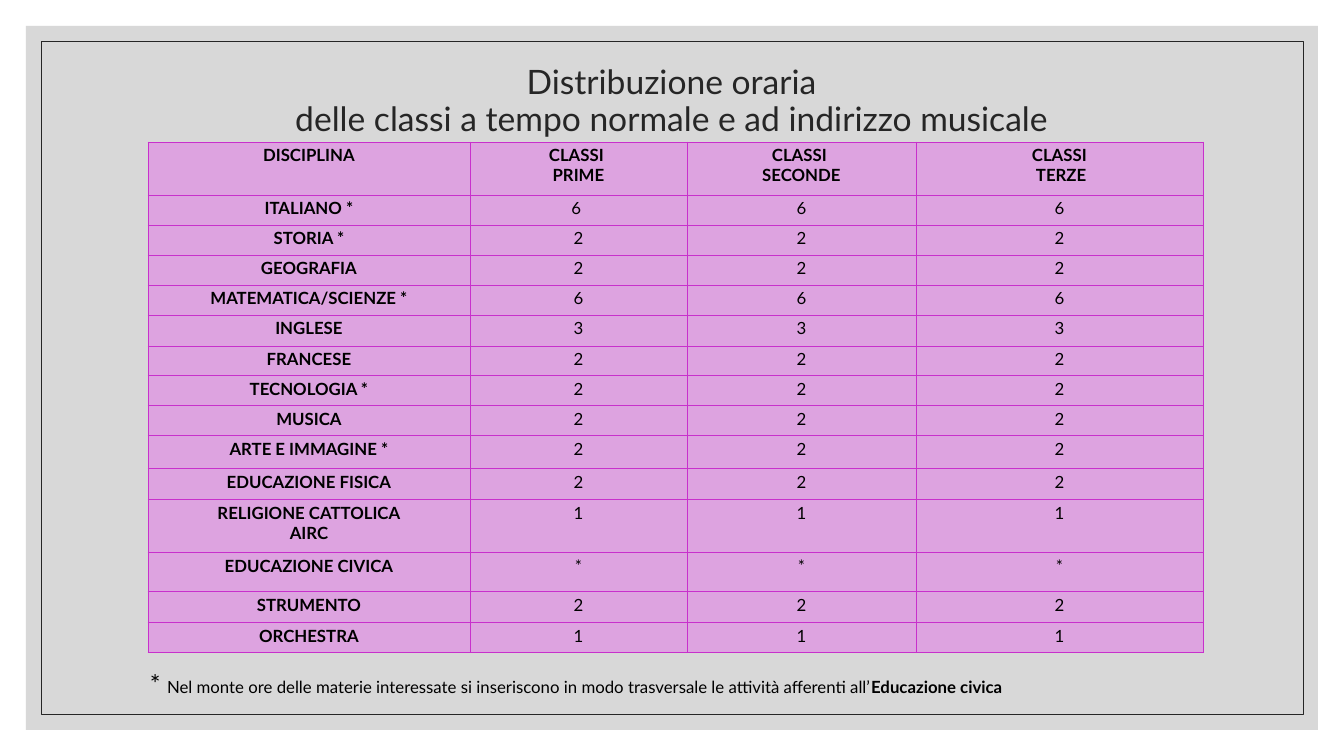
import pptx
import pptx.util
import pptx.oxml
import pptx.oxml.ns
import pptx.dml.color
import pptx.enum.shapes
import pptx.enum.text
from lxml import etree

EMU_PER_PX = 914400 / 100.8
FONT = "Lato"
COLORS = {
    "panel": "BFBFBF",
    "ink": "262626",
    "text": "000000",
    "cell": "DDA3E0",
    "border": "C830CC",
}
ALIGN = pptx.enum.text.PP_ALIGN
ANCHOR = pptx.enum.text.MSO_ANCHOR

COLUMN_WIDTHS = [322, 217, 229, 287]
ROW_HEIGHTS = [53, 30, 30, 30, 30, 31, 30, 30, 30, 33, 31, 53, 39, 31, 30]
HEADERS = ["DISCIPLINA", "CLASSI \nPRIME", "CLASSI \nSECONDE", "CLASSI\n TERZE"]
WEEKLY_HOURS = [
    ("ITALIANO *", "6"),
    ("STORIA *", "2"),
    ("GEOGRAFIA", "2"),
    ("MATEMATICA/SCIENZE *", "6"),
    ("INGLESE", "3"),
    ("FRANCESE", "2"),
    ("TECNOLOGIA *", "2"),
    ("MUSICA", "2"),
    ("ARTE E IMMAGINE *", "2"),
    ("EDUCAZIONE FISICA", "2"),
    ("RELIGIONE CATTOLICA\nAIRC", "1"),
    ("EDUCAZIONE CIVICA", "*"),
    ("STRUMENTO", "2"),
    ("ORCHESTRA", "1"),
]


def px(*lengths):
    return [pptx.util.Emu(round(n * EMU_PER_PX)) for n in lengths]


def rgb(name):
    return pptx.dml.color.RGBColor.from_string(COLORS[name])


def write(p, text, size=12, bold=False, color="text", align=ALIGN.LEFT):
    """Append text to a paragraph; a newline becomes a line break."""
    p.alignment = align
    for i, line in enumerate(text.split("\n")):
        if i:
            p.add_line_break()
        r = p.add_run()
        r.text = line
        r.font.name = FONT
        r.font.size = pptx.util.Pt(size)
        r.font.bold = bold
        r.font.color.rgb = rgb(color)


def add_rect(s, *box, fill=None, alpha=100, line=None):
    sp = s.shapes.add_shape(pptx.enum.shapes.MSO_SHAPE.RECTANGLE, *px(*box))
    sp.shadow.inherit = False
    if fill:
        sp.fill.solid()
        sp.fill.fore_color.rgb = rgb(fill)
        srgb = sp.fill._xPr.find(".//" + pptx.oxml.ns.qn("a:srgbClr"))
        etree.SubElement(srgb, pptx.oxml.ns.qn("a:alpha"), val=str(alpha * 1000))
    else:
        sp.fill.background()
    if line:
        sp.line.color.rgb = rgb(line)
        sp.line.width = pptx.util.Pt(0.5)
    else:
        sp.line.fill.background()


def add_text_box(s, *box, anchor=ANCHOR.TOP):
    tf = s.shapes.add_textbox(*px(*box)).text_frame
    tf.word_wrap = True
    tf.vertical_anchor = anchor
    return tf.paragraphs[0]


def add_borders(cell):
    tcPr = cell._tc.get_or_add_tcPr()
    for side in ("lnL", "lnR", "lnT", "lnB"):
        tcPr.append(pptx.oxml.parse_xml(
            f'<a:{side} {pptx.oxml.ns.nsdecls("a")} w="6350"><a:solidFill>'
            f'<a:srgbClr val="{COLORS["border"]}"/></a:solidFill></a:{side}>'))


def fill_cell(cell, text, bold):
    add_borders(cell)
    cell.fill.solid()
    cell.fill.fore_color.rgb = rgb("cell")
    cell.margin_left = cell.margin_right = px(3)[0]
    cell.margin_top = cell.margin_bottom = px(3)[0]
    tf = cell.text_frame
    for i, line in enumerate(text.split("\n")):
        p = tf.add_paragraph() if i else tf.paragraphs[0]
        write(p, line, bold=bold, align=ALIGN.CENTER)


def add_hours_table(s, left, top):
    rows = [HEADERS] + [[subject] + [hours] * 3 for subject, hours in WEEKLY_HOURS]
    rows[1][1] = "6 "
    box = px(left, top, sum(COLUMN_WIDTHS), sum(ROW_HEIGHTS))
    table = s.shapes.add_table(len(rows), len(HEADERS), *box).table
    table.first_row = table.horz_banding = False
    for column, width in zip(table.columns, px(*COLUMN_WIDTHS)):
        column.width = width
    for row, height in zip(table.rows, px(*ROW_HEIGHTS)):
        row.height = height
    for i, row in enumerate(rows):
        for j, text in enumerate(row):
            fill_cell(table.cell(i, j), text, bold=i == 0 or j == 0)


def main():
    prs = pptx.Presentation()
    prs.slide_width, prs.slide_height = px(1344, 756)
    s = prs.slides.add_slide(prs.slide_layouts[6])

    add_rect(s, 26, 26, 1292, 704, fill="panel", alpha=60)
    add_rect(s, 41, 41, 1262, 673, line="ink")

    title = add_text_box(s, 140, 51, 1063, 102, anchor=ANCHOR.MIDDLE)
    title.line_spacing = 0.9
    write(title, "Distribuzione oraria\ndelle classi a tempo normale e ad indirizzo musicale",
          size=24, color="ink", align=ALIGN.CENTER)

    add_hours_table(s, 148, 142)

    note = add_text_box(s, 140, 663, 1028, 40)
    write(note, "* ", size=18)
    write(note, "Nel monte ore delle materie interessate si inseriscono in modo "
                "trasversale le attività afferenti all’")
    write(note, "Educazione civica", bold=True)

    prs.save("out.pptx")


if __name__ == "__main__":
    main()
